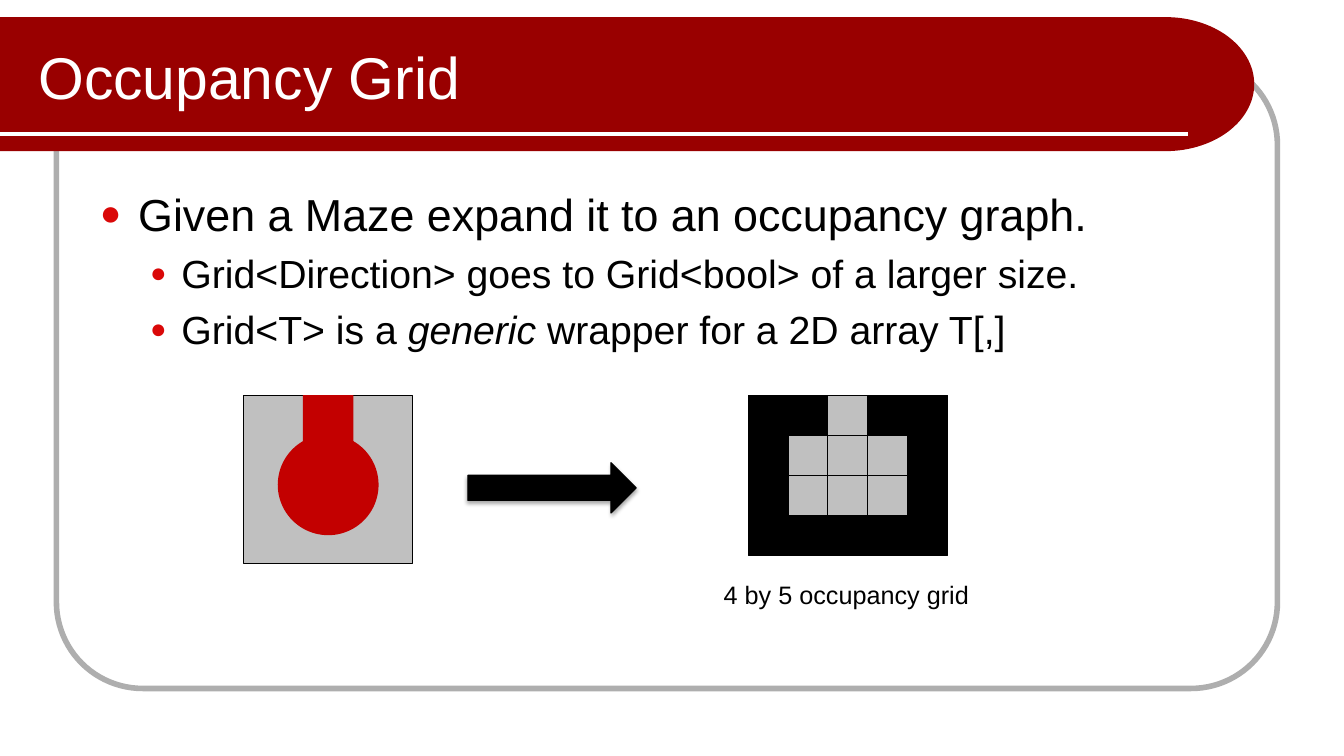
from dataclasses import dataclass
from math import cos, pi, sin

from lxml.etree import SubElement
from pptx import Presentation
from pptx.dml.color import RGBColor
from pptx.enum.shapes import MSO_CONNECTOR, MSO_SHAPE
from pptx.enum.text import MSO_ANCHOR, MSO_AUTO_SIZE, PP_ALIGN
from pptx.oxml.ns import qn
from pptx.util import Inches, Pt


@dataclass(frozen=True)
class Theme:
    font: str = "Arial"
    white: str = "FFFFFF"
    black: str = "000000"
    banner: str = "990000"
    frame: str = "AEAEAE"
    bullet: str = "DA0808"
    room: str = "C30000"
    floor: str = "C0C0C0"
    title_size: int = 42
    body_sizes: tuple = (32, 28)
    caption_size: int = 18


THEME = Theme()
# One entry per paragraph: level, then runs of (text, italic).
POINTS = [
    (0, [("Given a Maze expand it to an occupancy graph.", False)]),
    (1, [("Grid<Direction> goes to Grid<bool> of a larger size.", False)]),
    (1, [("Grid<T> is a ", False), ("generic", True),
         (" wrapper for a 2D array T[,]", False)]),
]
OCCUPANCY = ["##.##", "#...#", "#...#", "#####"]


def rgb(code):
    return RGBColor.from_string(code)


def add_text(paragraph, text, size, color=THEME.black, italic=False):
    run = paragraph.add_run()
    run.text = text
    run.font.name = THEME.font
    run.font.size = Pt(size)
    run.font.color.rgb = rgb(color)
    run.font.italic = italic


def style(shape, fill=None, line=None, width=0.75):
    shape.shadow.inherit = False
    if fill:
        shape.fill.solid()
        shape.fill.fore_color.rgb = rgb(fill)
    else:
        shape.fill.background()
    if line:
        shape.line.color.rgb = rgb(line)
        shape.line.width = Pt(width)
    else:
        shape.line.fill.background()


def add_preset(slide, kind, box, **look):
    shape = slide.shapes.add_shape(kind, *map(Inches, box))
    style(shape, **look)
    return shape


def place(placeholder, box):
    """Move a placeholder to the box and in front of everything drawn so far."""
    placeholder.left, placeholder.top, placeholder.width, placeholder.height = map(Inches, box)
    placeholder.element.getparent().append(placeholder.element)
    frame = placeholder.text_frame
    frame.word_wrap = True
    frame.auto_size = MSO_AUTO_SIZE.NONE
    return frame


def add_bullet(paragraph, margin, hanging, percent):
    properties = paragraph._p.get_or_add_pPr()
    properties.set("marL", str(Inches(margin)))
    properties.set("indent", str(-Inches(hanging)))
    color = SubElement(properties, qn("a:buClr"))
    SubElement(color, qn("a:srgbClr"), val=THEME.bullet)
    SubElement(properties, qn("a:buSzPct"), val=str(percent * 1000))
    SubElement(properties, qn("a:buFont"), typeface=THEME.font)
    SubElement(properties, qn("a:buChar"), char="●")


def add_shadow(shape):
    effects = shape._element.spPr.find(qn("a:effectLst"))
    shadow = SubElement(effects, qn("a:outerShdw"), blurRad=str(Pt(3.1)),
                        dist=str(Pt(1.8)), dir=str(90 * 60000), rotWithShape="0")
    color = SubElement(shadow, qn("a:srgbClr"), val=THEME.black)
    SubElement(color, qn("a:alpha"), val="35000")


def draw_frame(slide, box):
    frame = add_preset(slide, MSO_SHAPE.ROUNDED_RECTANGLE, box, line=THEME.frame, width=4)
    frame.adjustments[0] = 0.137


def draw_banner(slide, box):
    """Draw a band with a half-elliptic right end and a white rule near its foot."""
    left, top, width, height = box
    cap, steps = 0.88, 60
    center_x, center_y = left + width - cap, top + height / 2
    angles = [pi * (step / steps - 0.5) for step in range(steps + 1)]
    outline = [(Inches(center_x + cap * cos(angle)),
                Inches(center_y + height / 2 * sin(angle))) for angle in angles]
    outline.append((Inches(left), Inches(top + height)))
    builder = slide.shapes.build_freeform(Inches(left), Inches(top))
    builder.add_line_segments(outline, close=True)
    style(builder.convert_to_shape(), fill=THEME.banner)

    rule_y = Inches(top + 1.16)
    rule = slide.shapes.add_connector(MSO_CONNECTOR.STRAIGHT, Inches(left), rule_y,
                                      Inches(left + width - 0.66), rule_y)
    rule.line.color.rgb = rgb(THEME.white)
    rule.line.width = Pt(3)
    SubElement(rule._element.spPr, qn("a:effectLst"))


def write_title(slide, box):
    frame = place(slide.shapes.title, box)
    frame.vertical_anchor = MSO_ANCHOR.MIDDLE
    heading = frame.paragraphs[0]
    heading.alignment = PP_ALIGN.LEFT
    add_text(heading, "Occupancy Grid", THEME.title_size, color=THEME.white)


def write_points(slide, box):
    frame = place(slide.placeholders[1], box)
    bullets = [(0.38, 0.38, 80), (0.81, 0.31, 70)]
    for index, (level, runs) in enumerate(POINTS):
        point = frame.add_paragraph() if index else frame.paragraphs[0]
        point.level = level
        point.space_before = Pt(6.5 if index else 0)
        add_bullet(point, *bullets[level])
        for text, italic in runs:
            add_text(point, text, THEME.body_sizes[level], italic=italic)


def draw_maze_cell(slide, box):
    """Draw one maze cell: a round room with a passage to the top edge."""
    left, top, width, _ = box
    middle = left + width / 2
    add_preset(slide, MSO_SHAPE.RECTANGLE, box, fill=THEME.floor, line=THEME.black)
    add_preset(slide, MSO_SHAPE.RECTANGLE, (middle - 0.25, top, 0.5, 1.08), fill=THEME.room)
    add_preset(slide, MSO_SHAPE.OVAL, (middle - 0.5, top + 0.39, 1, 1), fill=THEME.room)


def draw_arrow(slide, box):
    arrow = add_preset(slide, MSO_SHAPE.RIGHT_ARROW, box, fill=THEME.black, line=THEME.black)
    add_shadow(arrow)


def draw_occupancy_grid(slide, box):
    left, top, width, height = box
    cell_width = width / len(OCCUPANCY[0])
    cell_height = height / len(OCCUPANCY)
    for row, marks in enumerate(OCCUPANCY):
        for column, mark in enumerate(marks):
            cell = (left + column * cell_width, top + row * cell_height,
                    cell_width, cell_height)
            add_preset(slide, MSO_SHAPE.RECTANGLE, cell, line=THEME.black,
                       fill=THEME.black if mark == "#" else THEME.floor)


def write_caption(slide, box):
    frame = slide.shapes.add_textbox(*map(Inches, box)).text_frame
    frame.word_wrap = False
    add_text(frame.paragraphs[0], "4 by 5 occupancy grid", THEME.caption_size)


def main():
    deck = Presentation()
    deck.slide_width, deck.slide_height = Inches(13.33), Inches(7.5)
    slide = deck.slides.add_slide(deck.slide_layouts[1])
    draw_frame(slide, (0.56, 0.58, 12.11, 6.25))
    draw_banner(slide, (0, 0.17, 12.44, 1.33))
    write_title(slide, (0.28, 0.25, 10.38, 1))
    write_points(slide, (0.89, 1.8, 11.56, 4.78))
    draw_maze_cell(slide, (2.42, 3.92, 1.67, 1.67))
    draw_arrow(slide, (4.64, 4.59, 1.67, 0.5))
    draw_occupancy_grid(slide, (7.42, 3.92, 1.98, 1.59))
    write_caption(slide, (7.08, 5.7, 2.66, 0.4))
    deck.save("out.pptx")


if __name__ == "__main__":
    main()
